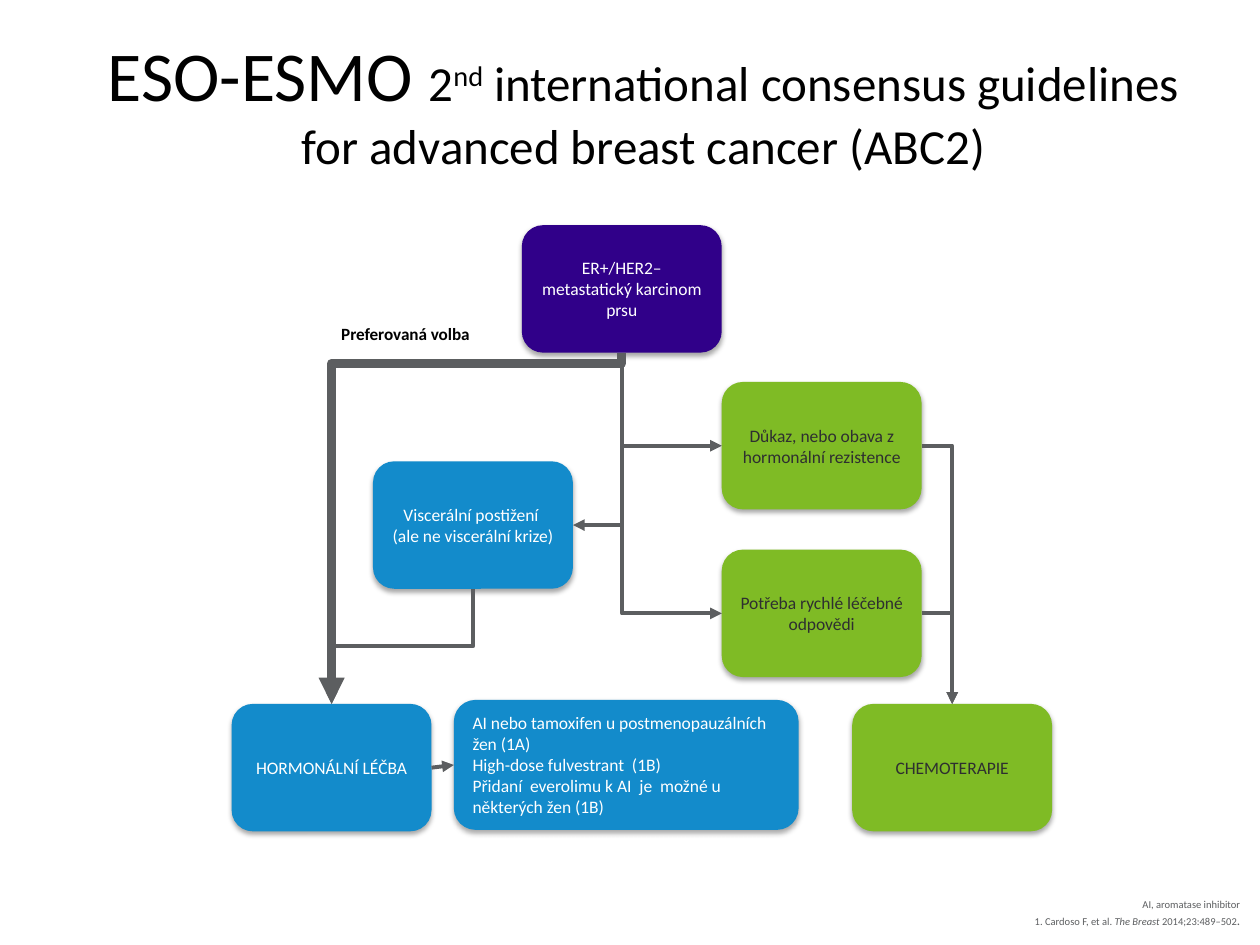
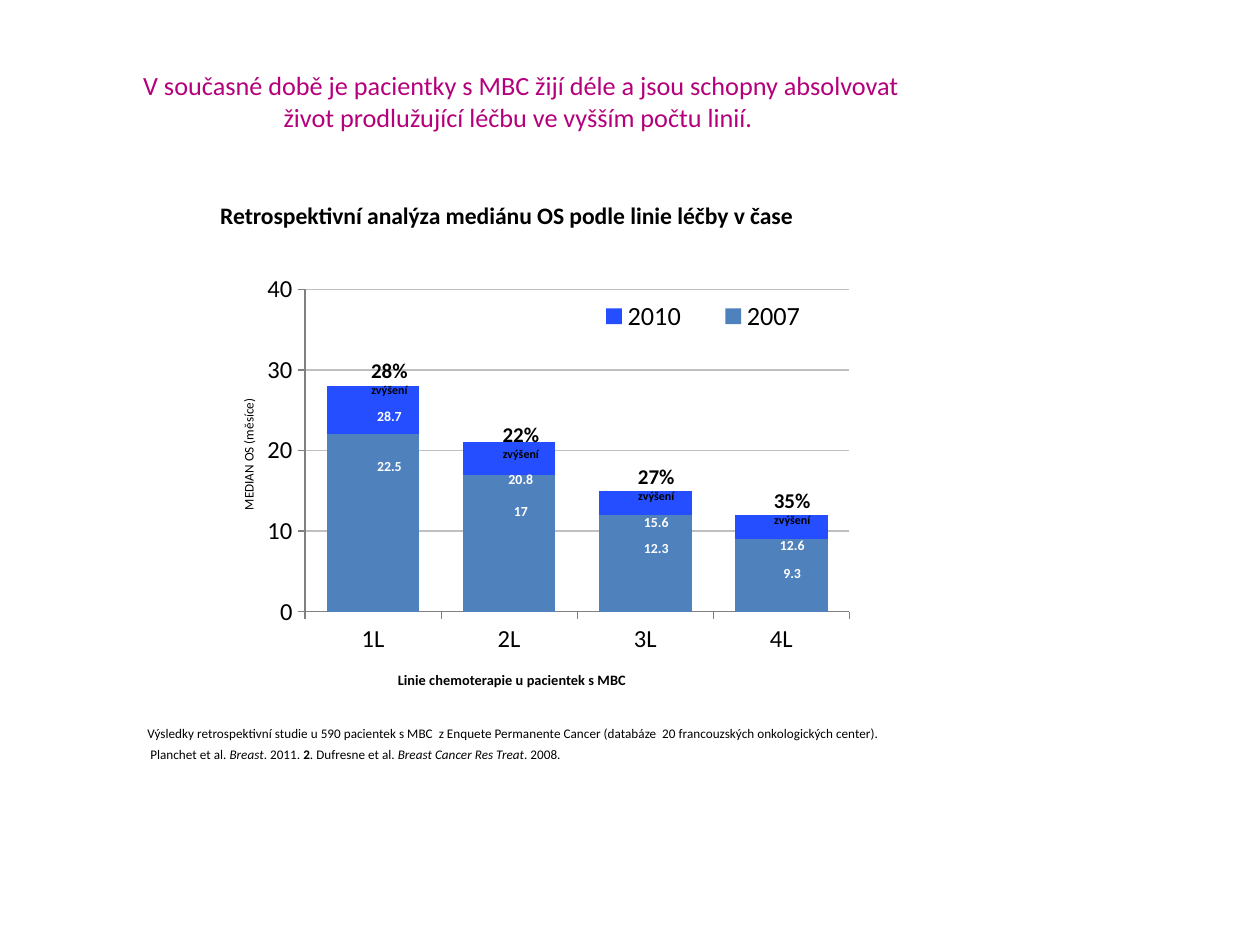
from lxml import etree
from pptx import Presentation
from pptx.chart.data import CategoryChartData
from pptx.dml.color import RGBColor
from pptx.enum import chart as charts, shapes, text
from pptx.oxml import parse_xml
from pptx.oxml.ns import nsdecls, qn
from pptx.util import Cm, Pt

FONT = "Calibri"
COLORS = {
    "black": "000000", "white": "FFFFFF", "ink": "2E2F30", "gray": "5C5E60",
    "purple": "300089", "blue": "138BCB", "green": "7FBB25", "magenta": "B5007C",
    "bar_2007": "4F81BD", "bar_2010": "244EFF", "grid": "BFBFBF", "axis": "808080",
}
ALIGN = text.PP_ALIGN
ANCHOR = text.MSO_ANCHOR
TOP, LEFT, BOTTOM, RIGHT = range(4)
BOX_WIDTH, BOX_HEIGHT = 4.03, 2.57


def rgb(name):
    return RGBColor.from_string(COLORS[name])


def style_font(font, size, color="black", bold=False, italic=False):
    font.name = FONT
    font.size = Pt(size)
    font.bold = bold
    font.italic = italic
    font.color.rgb = rgb(color)


def write(frame, lines, size, color="black", align=ALIGN.LEFT, gap=0, bold=False):
    """Each line is a string or a list of (words, changes) runs."""
    for i, line in enumerate(lines):
        paragraph = frame.paragraphs[0] if i == 0 else frame.add_paragraph()
        paragraph.alignment = align
        paragraph.space_before = Pt(gap if i else 0)
        for words, changes in [(line, {})] if isinstance(line, str) else line:
            changes = dict(changes)
            raised = changes.pop("raised", None)
            run = paragraph.add_run()
            run.text = words
            style_font(run.font, **{"size": size, "color": color, "bold": bold, **changes})
            if raised:
                run.font._element.set("baseline", str(raised * 1000))


def set_title(slide, place, runs, size, color="black"):
    title = slide.shapes.title
    title.left, title.top, title.width, title.height = map(Cm, place)
    frame = title.text_frame
    frame.word_wrap = True
    frame.auto_size = text.MSO_AUTO_SIZE.NONE
    frame.vertical_anchor = ANCHOR.MIDDLE
    write(frame, [runs], size, color, ALIGN.CENTER)


def add_text(slide, place, lines, size, color="black", wrap=False,
             anchor=ANCHOR.TOP, fit=True, **style):
    label = slide.shapes.add_textbox(*map(Cm, place))
    frame = label.text_frame
    frame.word_wrap = wrap
    frame.vertical_anchor = anchor
    frame.auto_size = (text.MSO_AUTO_SIZE.SHAPE_TO_FIT_TEXT if fit
                       else text.MSO_AUTO_SIZE.NONE)
    write(frame, lines, size, color, **style)
    return label


# Flow chart elements
def add_box(slide, left, top, lines, fill, color="white", width=BOX_WIDTH,
            height=BOX_HEIGHT, align=ALIGN.CENTER):
    box = slide.shapes.add_shape(shapes.MSO_SHAPE.ROUNDED_RECTANGLE,
                                 *map(Cm, (left, top, width, height)))
    box.fill.solid()
    box.fill.fore_color.rgb = rgb(fill)
    box.line.fill.background()
    box.shadow.inherit = False
    box._element.spPr.find(qn("a:effectLst")).append(parse_xml(
        f'<a:outerShdw {nsdecls("a")} blurRad="{Pt(3.1)}" dist="{Pt(1.8)}" '
        'dir="5400000" rotWithShape="0"><a:srgbClr val="000000">'
        '<a:alpha val="35000"/></a:srgbClr></a:outerShdw>'))
    frame = box.text_frame
    frame.word_wrap = True
    frame.vertical_anchor = ANCHOR.MIDDLE
    write(frame, lines, 10, color, align)
    return box


def add_arrow(slide, source, source_side, target, target_side, weight=2.25,
              kind=shapes.MSO_CONNECTOR.STRAIGHT):
    arrow = slide.shapes.add_connector(kind, 0, 0, 0, 0)
    arrow.begin_connect(source, source_side)
    arrow.end_connect(target, target_side)
    arrow.line.color.rgb = rgb("gray")
    arrow.line.width = Pt(weight)
    etree.SubElement(arrow.line._get_or_add_ln(), qn("a:tailEnd"), type="triangle")
    etree.SubElement(arrow._element.spPr, qn("a:effectLst"))
    return arrow


def add_elbow(slide, source, source_side, target, target_side, weight=2.25, bend=None):
    """One corner, or two corners with the first at the share `bend` of the way."""
    arrow = add_arrow(slide, source, source_side, target, target_side, weight,
                      shapes.MSO_CONNECTOR.ELBOW)
    x1, y1, x2, y2 = arrow.begin_x, arrow.begin_y, arrow.end_x, arrow.end_y
    width, height = abs(x2 - x1), abs(y2 - y1)
    frame = arrow._element.spPr.find(qn("a:xfrm"))
    for flip in ("flipH", "flipV"):
        frame.attrib.pop(flip, None)
    if source_side == BOTTOM:  # starts downwards, so the frame is turned
        width, height = height, width
        frame.set("rot", str((90 if x2 < x1 else 270) * 60000))
        if x2 > x1:
            frame.set("flipH", "1")
    arrow.left, arrow.top = (x1 + x2 - width) // 2, (y1 + y2 - height) // 2
    arrow.width, arrow.height = width, height
    geometry = arrow._element.spPr.find(qn("a:prstGeom"))
    if bend is None:
        geometry.set("prst", "bentConnector2")
    else:
        etree.SubElement(geometry.find(qn("a:avLst")), qn("a:gd"),
                         name="adj1", fmla=f"val {round(bend * 100000)}")


# Chart elements
def place_in_chart(part, x, y, w, h, inner=False):
    """Fix a chart part at shares of the chart's size."""
    old = part.find(qn("c:layout"))
    if old is not None:
        part.remove(old)
    target = '<c:layoutTarget val="inner"/>' if inner else ""
    values = "".join(f'<c:{tag} val="{value}"/>'
                     for tag, value in zip("xywh", (x, y, w, h)))
    layout = parse_xml(
        f'<c:layout {nsdecls("c")}><c:manualLayout>{target}<c:xMode val="edge"/>'
        f'<c:yMode val="edge"/>{values}</c:manualLayout></c:layout>')
    if inner:
        part.insert(0, layout)
    else:
        part.find(qn("c:legendPos")).addnext(layout)


def add_survival_chart(slide, place):
    data = CategoryChartData()
    data.categories = ["1L", "2L", "3L", "4L"]
    data.add_series("2007", (22, 17, 12, 9))
    data.add_series("2010", (6, 4, 3, 3))
    chart = slide.shapes.add_chart(charts.XL_CHART_TYPE.COLUMN_STACKED,
                                   *map(Cm, place), data).chart
    style_font(chart.font, 18)
    chart.has_title = False
    plot = chart.plots[0]
    plot.vary_by_categories = False
    plot.gap_width, plot.overlap = 47, 100
    for series in plot.series:
        series.format.fill.solid()
        series.format.fill.fore_color.rgb = rgb(f"bar_{series.name}")

    for axis in (chart.category_axis, chart.value_axis):
        style_font(axis.tick_labels.font, 14)
        axis.major_tick_mark = charts.XL_TICK_MARK.OUTSIDE
        axis.format.line.color.rgb = rgb("axis")
    months = chart.value_axis
    months.minimum_scale, months.maximum_scale, months.major_unit = 0, 40, 10
    months.major_gridlines.format.line.color.rgb = rgb("grid")
    months.major_gridlines.format.line.width = Pt(0.75)

    chart.has_legend = True
    chart.legend.position = charts.XL_LEGEND_POSITION.RIGHT
    chart.legend.include_in_layout = False
    style_font(chart.legend.font, 15)
    place_in_chart(chart.legend._element, 0.46, 0.06, 0.39, 0.09)
    place_in_chart(chart._chartSpace.chart.plotArea, 0.07, 0.04, 0.8, 0.78, inner=True)


def add_bar_labels(slide, center, rise, rise_top, new, new_top, old, old_top):
    for months, top in ((old, old_top), (new, new_top)):
        add_text(slide, (center - 0.5, top, 1, 0.58), [months], 7.9, "white",
                 anchor=ANCHOR.MIDDLE, align=ALIGN.CENTER, bold=True)
    add_text(slide, (center - 0.63, rise_top, 1.26, 1.07),
             [rise, [("zvýšení", {"size": 6.8})]], 12,
             anchor=ANCHOR.MIDDLE, align=ALIGN.CENTER, bold=True)


def build_guidelines(slide):
    set_title(slide, (1.54, 0.48, 22.86, 3.18), [
        ("ESO-ESMO ", {"size": 40}), ("2", {}), ("nd", {"raised": 30}),
        (" international consensus guidelines for advanced breast cancer (ABC2)", {})], 28)
    add_text(slide, (16.54, 17.6, 8.71, 1.24), [
        "AI, aromatase inhibitor",
        [("1. Cardoso F, et al. ", {}), ("The Breast ", {"italic": True}),
         ("2014;23:489–502", {}), (".", {"size": 7.5})]],
        6, "gray", wrap=True, anchor=ANCHOR.BOTTOM, fit=False, align=ALIGN.RIGHT, gap=1.2)

    # Decision boxes
    carcinoma = add_box(slide, 10.52, 4.54, ["ER+/HER2– metastatický karcinom prsu"], "purple")
    visceral = add_box(slide, 7.52, 9.3, ["Viscerální postižení ",
                                          "(ale ne viscerální krize)"], "blue")
    resistance = add_box(slide, 14.55, 7.7, ["Důkaz, nebo obava z hormonální rezistence"],
                         "green", "ink")
    rapid = add_box(slide, 14.55, 11.08, ["Potřeba rychlé léčebné odpovědi"], "green", "ink")
    hormonal = add_box(slide, 4.67, 14.19, ["HORMONÁLNÍ LÉČBA"], "blue")
    chemo = add_box(slide, 17.18, 14.19, ["CHEMOTERAPIE"], "green", "ink")

    # Paths between them
    add_elbow(slide, carcinoma, BOTTOM, visceral, RIGHT)
    for reason in (resistance, rapid):
        add_elbow(slide, carcinoma, BOTTOM, reason, LEFT)
        add_elbow(slide, reason, RIGHT, chemo, TOP)
    add_elbow(slide, carcinoma, BOTTOM, hormonal, TOP, weight=5, bend=0.03)
    add_elbow(slide, visceral, BOTTOM, hormonal, TOP, bend=0.5)
    add_text(slide, (6.63, 6.4, 3.56, 0.69), ["Preferovaná volba"], 9.75, bold=True)

    # Hormonal regimens
    regimens = add_box(slide, 9.15, 14.11, [
        "AI nebo tamoxifen u postmenopauzálních žen (1A)",
        "High-dose fulvestrant  (1B)",
        "Přidaní  everolimu k AI  je  možné u některých žen (1B)"],
        "blue", width=6.95, height=2.62, align=ALIGN.LEFT)
    add_arrow(slide, hormonal, RIGHT, regimens, LEFT)


def build_survival(slide):
    set_title(slide, (2.1, 1.12, 16.81, 1.83), [
        ("V současné době je pacientky s MBC žijí déle a jsou schopny absolvovat "
         "život prodlužující léčbu ve vyšším počtu linií. ", {})], 15, "magenta")
    add_survival_chart(slide, (5.19, 5.5, 13.72, 8.33))

    # Study note and axis captions
    italic = {"italic": True}
    add_text(slide, (2.72, 14.5, 17.32, 1.42), [
        "Výsledky retrospektivní studie u 590 pacientek s MBC  z Enquete Permanente "
        "Cancer (databáze  20 francouzských onkologických center).",
        [(" Planchet et al. ", {}), ("Breast", italic), (". 2011. ", {}),
         ("2", {"bold": True}), (". Dufresne et al. ", {}),
         ("Breast Cancer Res Treat", italic), (". 2008.", {})]], 7.5, wrap=True, gap=3)
    months = add_text(slide, (3.63, 8.86, 2.77, 0.58), ["MEDIAN OS (měsíce)"], 7.5)
    months.rotation = 270
    add_text(slide, (7.77, 13.41, 5.16, 0.61), ["Linie chemoterapie u pacientek s MBC"],
             8.25, bold=True)

    # Bar labels: centre, then each label with its top
    for labels in (
        (7.85, "28%", 7.07, "28.7", 8.1, "22.5", 9.11),
        (10.5, "22%", 8.36, "20.8", 9.37, "17", 10.01),
        (13.23, "27%", 9.2, "15.6", 10.24, "12.3", 10.75),
        (15.97, "35%", 9.69, "12.6", 10.69, "9.3", 11.26),
    ):
        add_bar_labels(slide, *labels)
    add_text(slide, (4.19, 3.93, 12.32, 0.84),
             ["Retrospektivní analýza mediánu OS podle linie léčby v čase"], 13.5, bold=True)


def main():
    deck = Presentation()
    deck.slide_width, deck.slide_height = Cm(25.4), Cm(19.05)
    title_only = deck.slide_layouts[5]
    for build in (build_guidelines, build_survival):
        build(deck.slides.add_slide(title_only))
    deck.save("out.pptx")


if __name__ == "__main__":
    main()
